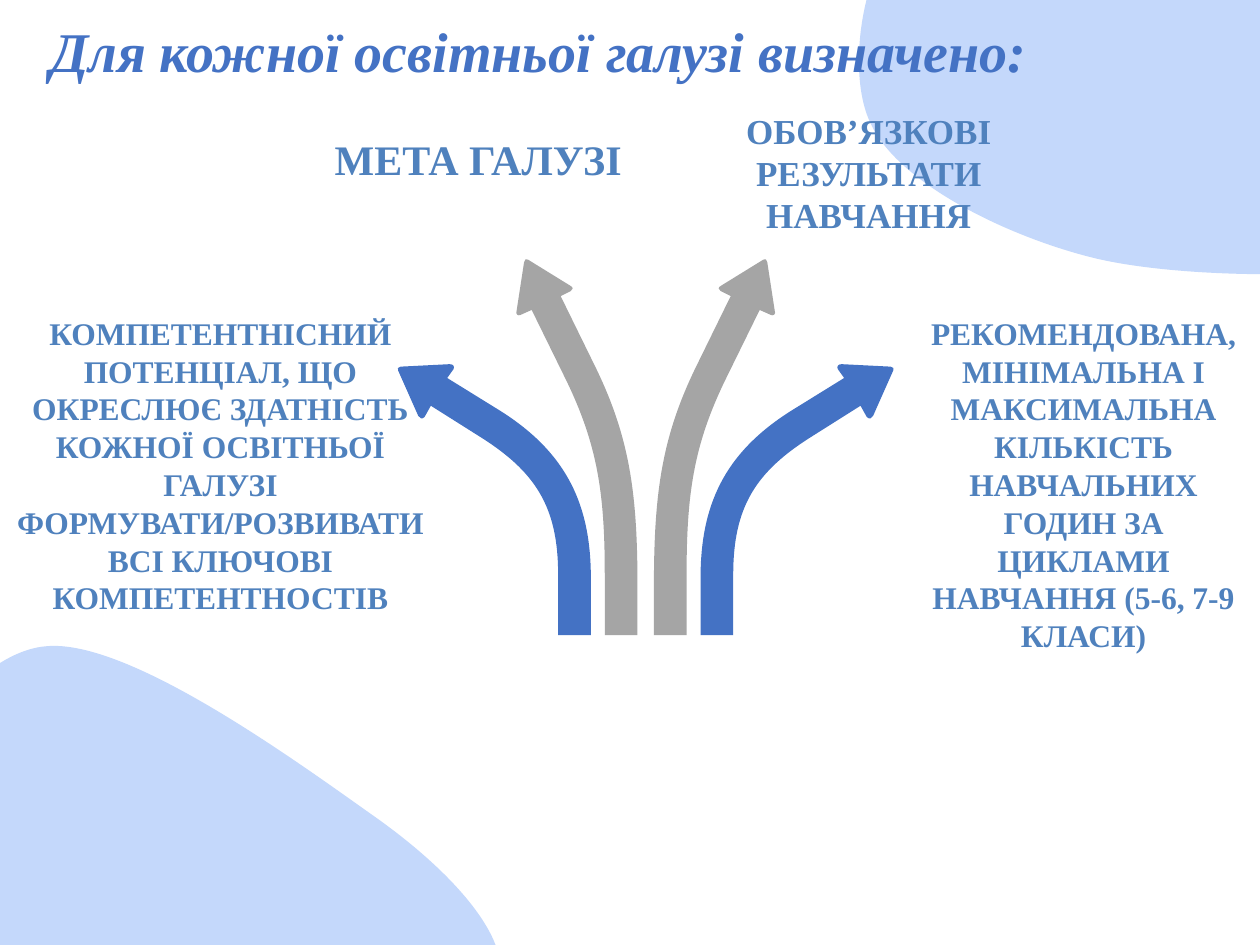
from dataclasses import dataclass
from math import cos, radians, sin

from lxml.etree import SubElement
from pptx import Presentation
from pptx.dml.color import RGBColor
from pptx.enum.text import MSO_ANCHOR as Anchor, MSO_AUTO_SIZE as Fit, PP_ALIGN as Align
from pptx.oxml.ns import qn
from pptx.util import Inches, Pt

PALE, BLUE, GRAY, STEEL = "C4D8FB", "4472C4", "A5A5A5", "4F81BD"
SPAN = 10.25  # an x and its mirror image add up to this

Route = list[tuple[float, ...]]


@dataclass
class Label:
    text: str
    left: float
    top: float
    width: float
    height: float
    size: int


@dataclass
class Figure:
    """An outline: a pair is a straight step, six numbers are a Bezier curve."""
    left: float
    top: float
    width: float
    height: float
    fill: str
    route: Route
    turn: float = 0


BLOBS = [
    Figure(6.58, -0.56, 4.66, 3.07, PALE, [
        (7.34, -0.71), (7.81, -0.91, 9.12, -0.57, 9.73, -0.24),
        (10.34, 0.09, 10.79, 0.9, 11.02, 1.29), (11.25, 1.68, 11.51, 1.96, 11.11, 2.08),
        (10.72, 2.21, 9.35, 2.22, 8.65, 2.04), (7.95, 1.86, 7.12, 1.44, 6.91, 0.98),
        (6.69, 0.53, 6.87, -0.5, 7.34, -0.71)], 48.6),
    Figure(-0.91, 5.37, 4.59, 3.41, PALE, [
        (0.36, 5.13), (1.02, 5.06, 2.39, 6.07, 3, 6.5),
        (3.6, 6.93, 3.97, 7.38, 3.97, 7.68), (3.98, 7.97, 3.57, 8.23, 3.03, 8.27),
        (2.5, 8.31, 1.44, 8.17, 0.77, 7.94), (0.1, 7.71, -0.9, 7.35, -0.97, 6.88),
        (-1.04, 6.41, -0.31, 5.19, 0.36, 5.13)], 48.6),
]
ARROWS = [
    Figure(3.15, 2.89, 1.53, 2.15, BLUE, [
        (4.69, 5.04), (4.69, 4.59), (4.69, 4.02, 4.51, 3.6, 3.97, 3.26), (3.55, 3),
        (3.6, 2.93), (3.61, 2.91, 3.6, 2.89, 3.57, 2.89), (3.18, 2.91),
        (3.16, 2.91, 3.15, 2.93, 3.16, 2.94), (3.32, 3.3),
        (3.33, 3.32, 3.35, 3.33, 3.37, 3.31), (3.42, 3.22), (3.8, 3.46),
        (4.25, 3.74, 4.43, 4.02, 4.43, 4.56), (4.43, 5.04), (4.69, 5.04)]),
    Figure(4.09, 2.05, 0.96, 2.99, GRAY, [
        (4.8, 5.04), (5.06, 5.04), (5.06, 4.66), (5.06, 3.92, 5, 3.47, 4.72, 2.9),
        (4.45, 2.35), (4.53, 2.31), (4.55, 2.3, 4.55, 2.28, 4.53, 2.27), (4.19, 2.06),
        (4.18, 2.05, 4.16, 2.06, 4.16, 2.08), (4.1, 2.47),
        (4.09, 2.49, 4.11, 2.51, 4.13, 2.5), (4.22, 2.46), (4.5, 3.03),
        (4.74, 3.53, 4.8, 3.91, 4.8, 4.55), (4.8, 5.04)]),
]

TITLE = Label("Для кожної освітньої галузі визначено:", 0.3, 0, 9, 0.87, 32)
LABELS = [
    Label("МЕТА ГАЛУЗІ", 2.52, 1.06, 2.55, 0.4, 24),
    Label("КОМПЕТЕНТНІСНИЙ ПОТЕНЦІАЛ, ЩО ОКРЕСЛЮЄ ЗДАТНІСТЬ КОЖНОЇ ОСВІТНЬОЇ ГАЛУЗІ "
          "ФОРМУВАТИ/РОЗВИВАТИ ВСІ КЛЮЧОВІ КОМПЕТЕНТНОСТІВ", 0.12, 2.49, 3.26, 2.42, 18),
    Label("ОБОВ’ЯЗКОВІ РЕЗУЛЬТАТИ НАВЧАННЯ", 5.71, 0.87, 2.37, 1.01, 20),
    Label("РЕКОМЕНДОВАНА, МІНІМАЛЬНА І МАКСИМАЛЬНА КІЛЬКІСТЬ НАВЧАЛЬНИХ ГОДИН ЗА "
          "ЦИКЛАМИ НАВЧАННЯ (5-6, 7-9 КЛАСИ)", 7.3, 2.49, 2.6, 2.73, 18),
]


def color(code: str) -> RGBColor:
    return RGBColor.from_string(code)


def mirror(fig: Figure) -> Figure:
    route = [tuple(SPAN - v if i % 2 == 0 else v for i, v in enumerate(step))
             for step in fig.route]
    return Figure(SPAN - fig.left - fig.width, fig.top, fig.width, fig.height,
                  fig.fill, route)


def local(fig: Figure, x: float, y: float) -> tuple[int, int]:
    """Undo the turn of a point and measure it from the frame's corner."""
    dx, dy = x - fig.left - fig.width / 2, y - fig.top - fig.height / 2
    c, s = cos(radians(fig.turn)), sin(radians(fig.turn))
    return (Inches(fig.width / 2 + c * dx + s * dy),
            Inches(fig.height / 2 - s * dx + c * dy))


def draw(slide, fig: Figure) -> None:
    """Span the frame with a freeform, then trace the outline with curves."""
    right, low = fig.left + fig.width, fig.top + fig.height
    pen = slide.shapes.build_freeform(Inches(fig.left), Inches(fig.top))
    pen.add_line_segments([(Inches(right), Inches(low))])
    shape = pen.convert_to_shape()
    trace = shape._element.xpath(".//a:path")[0]
    for node in list(trace):
        trace.remove(node)
    for n, step in enumerate(fig.route):
        kind = "a:moveTo" if n == 0 else "a:lnTo" if len(step) == 2 else "a:cubicBezTo"
        node = SubElement(trace, qn(kind))
        for x, y in zip(step[::2], step[1::2]):
            px, py = local(fig, x, y)
            SubElement(node, qn("a:pt"), x=str(int(px)), y=str(int(py)))
    SubElement(trace, qn("a:close"))
    shape.rotation = fig.turn
    shape.shadow.inherit = False
    shape.fill.solid()
    shape.fill.fore_color.rgb = color(fig.fill)
    shape.line.fill.background()


def write(slide, label: Label, tint: str):
    """Add bold text and return its frame and paragraph."""
    box = slide.shapes.add_textbox(Inches(label.left), Inches(label.top),
                                   Inches(label.width), Inches(label.height))
    frame = box.text_frame
    frame.word_wrap = True
    para = frame.paragraphs[0]
    para.text = label.text
    font = para.font
    font.name, font.size, font.bold = "Times New Roman", Pt(label.size), True
    font.color.rgb = color(tint)
    return frame, para


def main() -> None:
    deck = Presentation()
    deck.slide_width, deck.slide_height = Inches(10), Inches(7.5)
    slide = deck.slides.add_slide(deck.slide_layouts[6])

    for blob in BLOBS:
        draw(slide, blob)

    frame, para = write(slide, TITLE, BLUE)
    frame.vertical_anchor = Anchor.MIDDLE
    para.line_spacing = 0.9
    para.font.italic = True

    for label in LABELS:
        frame, para = write(slide, label, STEEL)
        frame.margin_left = frame.margin_right = 0
        frame.margin_top = frame.margin_bottom = 0
        frame.auto_size = Fit.SHAPE_TO_FIT_TEXT
        para.alignment = Align.CENTER

    for arrow in ARROWS + [mirror(a) for a in ARROWS]:
        draw(slide, arrow)

    deck.save("out.pptx")


if __name__ == "__main__":
    main()
